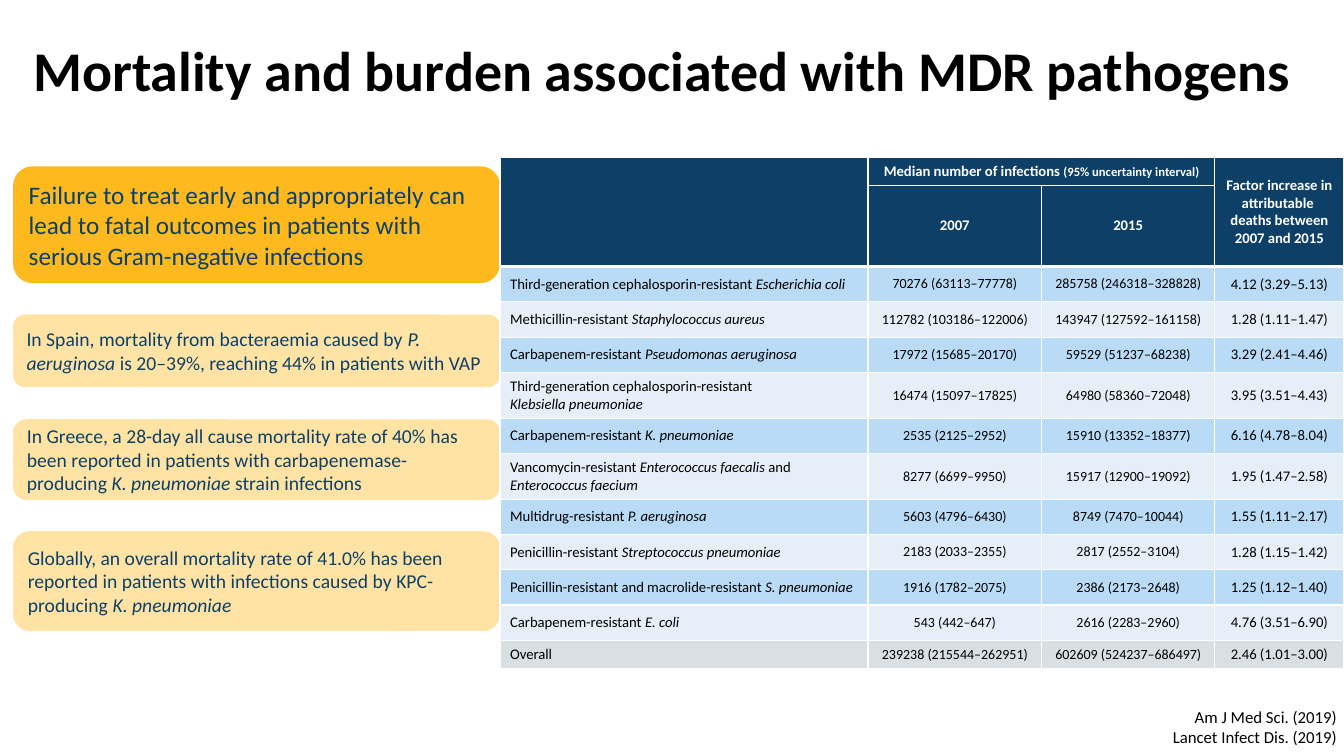
"""Build the slide on mortality and burden of MDR pathogens."""
from lxml.etree import fromstring
from pptx import Presentation
from pptx.dml.color import RGBColor
from pptx.enum.shapes import MSO_SHAPE as Shape
from pptx.enum.text import MSO_ANCHOR as Anchor, MSO_AUTO_SIZE as Fit, PP_ALIGN as Align
from pptx.util import Pt

PX = 9144
NS = "http://schemas.openxmlformats.org/drawingml/2006/main"
FONT = "Calibri"
HUES = {"navy": "0E4067", "gold": "FDB91D", "cream": "FEE3A5", "sky": "BADBF6",
        "pale": "E6EFF8", "grey": "D8E0E3", "white": "FFFFFF", "black": "000000"}

TITLE = "Mortality and burden associated with MDR pathogens"
# Asterisks enclose italic words.
CARDS = [
    (165, 116, "gold", 18, "Failure to treat early and appropriately can lead to fatal "
     "outcomes in patients with serious Gram-negative infections"),
    (312, 72, "cream", 14, "In Spain, mortality from bacteraemia caused by "
     "*P. aeruginosa* is 20–39%, reaching 44% in patients with VAP"),
    (416, 80, "cream", 14, "In Greece, a 28-day all cause mortality rate of 40% has been "
     "reported in patients with carbapenemase-producing *K. pneumoniae *strain infections"),
    (527, 99, "cream", 14, "Globally, an overall mortality rate of 41.0% has been reported "
     "in patients with infections caused by KPC-producing *K. pneumoniae*"),
]
YEARS = ["2007", "2015"]
SPAN = [("Median number of infections ", 10.5), ("(95% uncertainty interval)", 9)]
FACTOR = ["Factor increase in attributable ", "deaths between 2007 and 2015"]
ROWS = [
    ("Third-generation cephalosporin-resistant *Escherichia coli*",
     "70276 (63113–77778)", "285758 (246318–328828)", "4.12 (3.29–5.13)"),
    ("Methicillin-resistant *Staphylococcus aureus*",
     "112782 (103186–122006)", "143947 (127592–161158)", "1.28 (1.11–1.47)"),
    ("Carbapenem-resistant *Pseudomonas aeruginosa*",
     "17972 (15685–20170)", "59529 (51237–68238)", "3.29 (2.41–4.46)"),
    ("Third-generation cephalosporin-resistant \n*Klebsiella pneumoniae*",
     "16474 (15097–17825)", "64980 (58360–72048)", "3.95 (3.51–4.43)"),
    ("Carbapenem-resistant *K. pneumoniae*",
     "2535 (2125–2952)", "15910 (13352–18377)", "6.16 (4.78–8.04)"),
    ("Vancomycin-resistant *Enterococcus faecalis *and *Enterococcus faecium*",
     "8277 (6699–9950)", "15917 (12900–19092)", "1.95 (1.47–2.58)"),
    ("Multidrug-resistant *P. aeruginosa*",
     "5603 (4796–6430)", "8749 (7470–10044)", "1.55 (1.11–2.17)"),
    ("Penicillin-resistant *Streptococcus pneumoniae*",
     "2183 (2033–2355)", "2817 (2552–3104)", "1.28 (1.15–1.42)"),
    ("Penicillin-resistant and macrolide-resistant *S. pneumoniae*",
     "1916 (1782–2075)", "2386 (2173–2648)", "1.25 (1.12–1.40)"),
    ("Carbapenem-resistant *E. coli*",
     "543 (442–647)", "2616 (2283–2960)", "4.76 (3.51–6.90)"),
    ("Overall", "239238 (215544–262951)", "602609 (524237–686497)", "2.46 (1.01–3.00)"),
]
COLS = [365, 172, 172, 128]
TALL = [27, 51] + [35] * 10 + [27]
CITES = ["Am J Med Sci. (2019)", "Lancet Infect Dis. (2019)"]


def color(name):
    return RGBColor.from_string(HUES[name])


def box(*sides):
    return [side * PX for side in sides]


def write(para, text, size, hue, bold=False, align=Align.LEFT):
    para.alignment = align
    for turn, part in enumerate(text.split("*")):
        for row, line in enumerate(part.split("\n")):
            if row:
                para.add_line_break()
            if line:
                run = para.add_run()
                run.text = line
                font = run.font
                font.name, font.size = FONT, Pt(size)
                font.bold, font.italic = bold, turn % 2 == 1
                font.color.rgb = color(hue)


def lines(frame, texts, *style):
    for num, text in enumerate(texts):
        para = frame.add_paragraph() if num else frame.paragraphs[0]
        write(para, text, *style)


def dress(cell, hue, top, base):
    cell.fill.solid()
    cell.fill.fore_color.rgb = color(hue)
    cell.vertical_anchor = Anchor.MIDDLE
    props = cell._tc.get_or_add_tcPr()
    for num, (side, width) in enumerate(zip("LRTB", (1, 1, top, base))):
        props.insert(num, fromstring(
            f'<a:ln{side} xmlns:a="{NS}" w="{Pt(width)}"><a:solidFill>'
            f'<a:srgbClr val="{HUES["white"]}"/></a:solidFill></a:ln{side}>'))


def add_title(slide):
    title = slide.shapes.title
    title.left, title.top, title.width, title.height = box(23, 0, 1288, 145)
    frame = title.text_frame
    frame.vertical_anchor, frame.word_wrap = Anchor.MIDDLE, True
    frame.auto_size = Fit.NONE
    write(frame.paragraphs[0], TITLE, 40, "black", True)
    frame.paragraphs[0].line_spacing = 0.9


def add_cards(slide):
    for top, tall, hue, size, text in CARDS:
        card = slide.shapes.add_shape(Shape.ROUNDED_RECTANGLE, *box(13, top, 483, tall))
        card.shadow.inherit = False
        card.fill.solid()
        card.fill.fore_color.rgb = color(hue)
        card.line.fill.background()
        frame = card.text_frame
        frame.word_wrap, frame.vertical_anchor = True, Anchor.MIDDLE
        frame.margin_left = frame.margin_right = 10 * PX
        frame.margin_top = frame.margin_bottom = 10 * PX
        write(frame.paragraphs[0], text, size, "navy")


def add_grid(slide):
    place = box(496, 156, sum(COLS), sum(TALL))
    grid = slide.shapes.add_table(len(TALL), len(COLS), *place).table
    for col, wide in zip(grid.columns, COLS):
        col.width = wide * PX
    for row, tall in zip(grid.rows, TALL):
        row.height = tall * PX
    for num in range(len(TALL)):
        hue = "navy" if num < 2 else ("sky", "pale")[num % 2]
        if num == len(TALL) - 1:
            hue = "grey"
        for col in range(len(COLS)):
            thick = num == 1 or (num == 0 and col in (0, 3))
            dress(grid.cell(num, col), hue, 3 if num == 2 else 1, 3 if thick else 1)
    for start, end in [((0, 0), (1, 0)), ((0, 1), (0, 2)), ((0, 3), (1, 3))]:
        grid.cell(*start).merge(grid.cell(*end))
    head = ("white", True, Align.CENTER)
    for text, size in SPAN:
        write(grid.cell(0, 1).text_frame.paragraphs[0], text, size, *head)
    lines(grid.cell(0, 3).text_frame, FACTOR, 10.5, *head)
    for col, year in enumerate(YEARS, 1):
        lines(grid.cell(1, col).text_frame, [year], 10.5, *head)
    for num, row in enumerate(ROWS, 2):
        for col, text in enumerate(row):
            size = 10 if col in (1, 2) else 10.5
            align = Align.CENTER if col else Align.LEFT
            lines(grid.cell(num, col).text_frame, [text], size, "black", False, align)


def add_cites(slide):
    frame = slide.shapes.add_textbox(*box(1147, 696, 189, 50)).text_frame
    frame.word_wrap, frame.auto_size = False, Fit.SHAPE_TO_FIT_TEXT
    lines(frame, CITES, 12, "black", False, Align.RIGHT)


def main():
    deck = Presentation()
    deck.slide_width, deck.slide_height = box(1333, 750)
    slide = deck.slides.add_slide(deck.slide_layouts[5])
    add_title(slide)
    add_cards(slide)
    add_grid(slide)
    add_cites(slide)
    deck.save("out.pptx")


if __name__ == "__main__":
    main()
